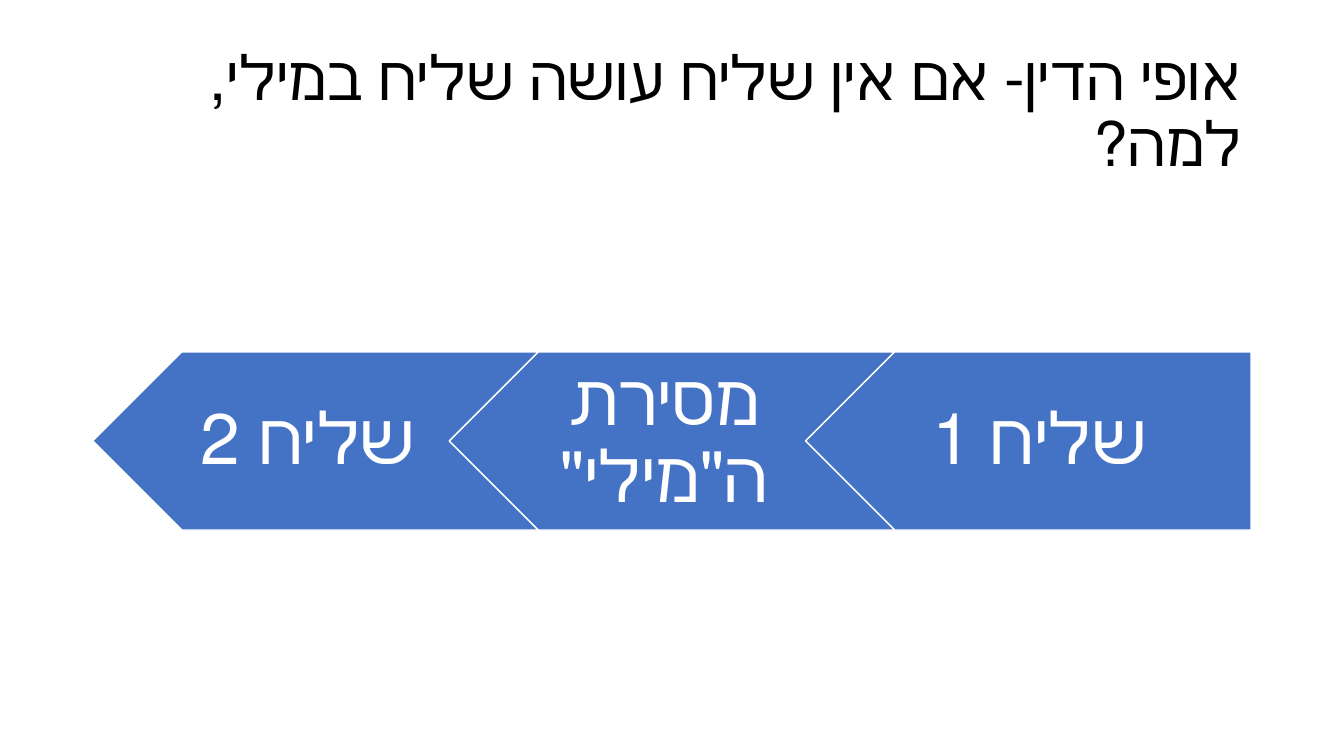
from dataclasses import dataclass

from pptx import Presentation
from pptx.dml.color import RGBColor
from pptx.enum.shapes import MSO_SHAPE as Shape
from pptx.enum.text import MSO_ANCHOR as Anchor, MSO_AUTO_SIZE as AutoSize, PP_ALIGN as Align
from pptx.slide import Slide
from pptx.text.text import TextFrame
from pptx.util import Pt

COLORS = {"text": "000000", "arrow": "4472C4", "light": "FFFFFF"}
FONT = "Calibri"
ARROW_LEFT, ARROW_TOP = 66.24, 251.3
ARROW_WIDTH, ARROW_HEIGHT = 318.2, 127.3
TIP = ARROW_HEIGHT / 2
STEP = ARROW_WIDTH * 0.8


@dataclass
class Stage:
    text: str
    kind: Shape
    text_offset: float
    text_width: float
    right_inset: float


CHEVRON = (Shape.CHEVRON, TIP, ARROW_WIDTH - 2 * TIP, 16)
STAGES = [
    Stage("שליח 1", Shape.PENTAGON, TIP / 2, ARROW_WIDTH - TIP / 2, 21.3),
    Stage('מסירת ה"מילי"', *CHEVRON),
    Stage("שליח 2", *CHEVRON),
]


def apply_format(target: object, values: dict) -> None:
    for name, value in values.items():
        setattr(target, name, value)


def color(name: str) -> RGBColor:
    return RGBColor.from_string(COLORS[name])


def write_hebrew(frame: TextFrame, text: str, size: float, color_name: str, align: Align) -> None:
    apply_format(frame, {
        "word_wrap": True,
        "auto_size": AutoSize.NONE,
        "vertical_anchor": Anchor.MIDDLE,
    })
    para = frame.paragraphs[0]
    apply_format(para, {"alignment": align, "line_spacing": 0.9})
    para._p.get_or_add_pPr().set("rtl", "1")
    span = para.add_run()
    span.text = text
    apply_format(span.font, {"name": FONT, "size": Pt(size), "bold": False})
    span.font.color.rgb = color(color_name)
    span._r.get_or_add_rPr().set("lang", "he-IL")


def add_title(page: Slide, text: str) -> None:
    title = page.shapes.title
    apply_format(title, {"left": Pt(66), "top": Pt(28.75), "width": Pt(828), "height": Pt(104.4)})
    write_hebrew(title.text_frame, text, 44, "text", Align.RIGHT)


def add_stage(page: Slide, stage: Stage, left: float) -> None:
    arrow = page.shapes.add_shape(
        stage.kind, Pt(left), Pt(ARROW_TOP), Pt(ARROW_WIDTH), Pt(ARROW_HEIGHT))
    arrow.rotation = 180
    arrow.shadow.inherit = False
    arrow.fill.solid()
    arrow.fill.fore_color.rgb = color("arrow")
    arrow.line.color.rgb = color("light")
    arrow.line.width = Pt(1)

    box = page.shapes.add_textbox(
        Pt(left + stage.text_offset), Pt(ARROW_TOP), Pt(stage.text_width), Pt(ARROW_HEIGHT))
    apply_format(box.text_frame, {
        "margin_left": Pt(5.3),
        "margin_right": Pt(stage.right_inset),
        "margin_top": Pt(10.7),
        "margin_bottom": Pt(10.7),
    })
    write_hebrew(box.text_frame, stage.text, 51, "light", Align.CENTER)


def main() -> None:
    deck = Presentation()
    apply_format(deck, {"slide_width": Pt(960), "slide_height": Pt(540)})
    page = deck.slides.add_slide(deck.slide_layouts[5])
    add_title(page, "אופי הדין- אם אין שליח עושה שליח במילי, למה?")
    for index, stage in enumerate(STAGES):
        add_stage(page, stage, ARROW_LEFT + (len(STAGES) - 1 - index) * STEP)
    deck.save("out.pptx")


if __name__ == "__main__":
    main()
